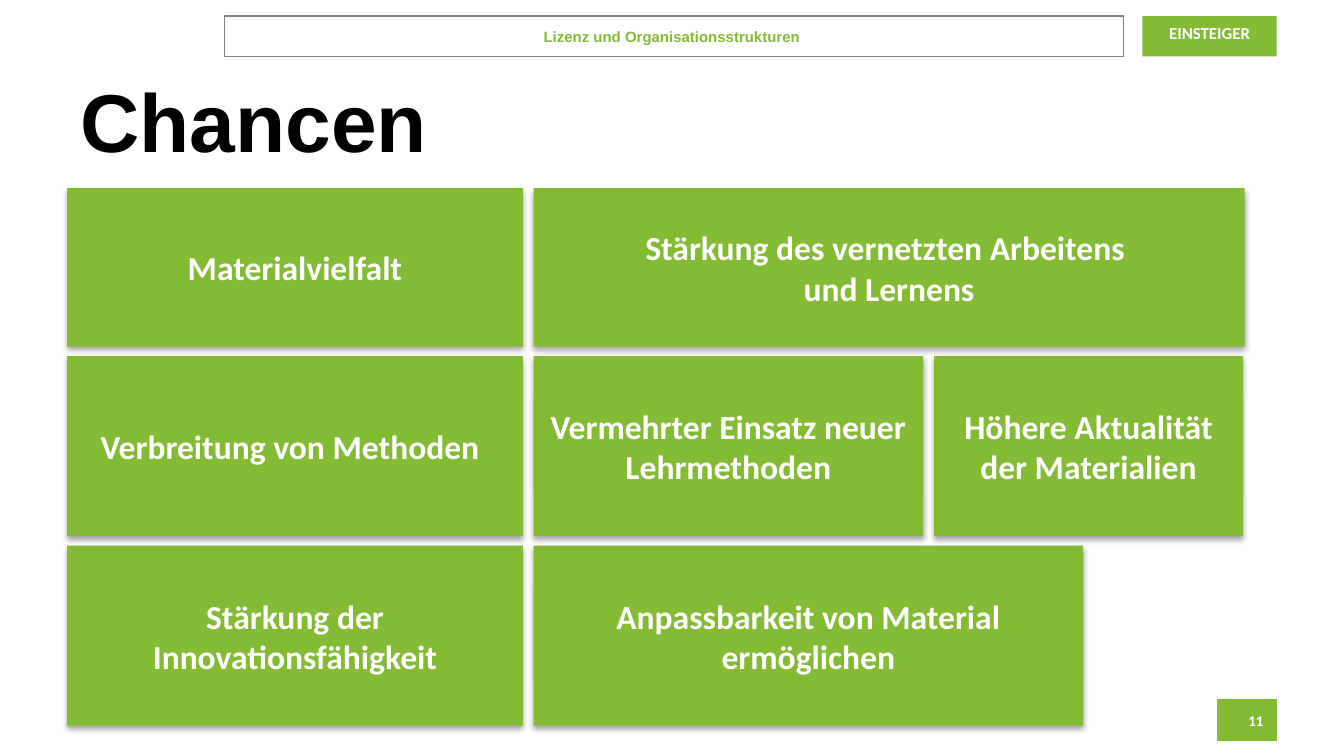
"""Build the slide "Chancen" with its grid of green tiles."""
from lxml import etree
from pptx import Presentation
from pptx.dml.color import RGBColor
from pptx.enum.shapes import MSO_SHAPE
from pptx.enum.text import MSO_ANCHOR, PP_ALIGN
from pptx.oxml.ns import qn
from pptx.util import Inches, Pt

RECT = MSO_SHAPE.RECTANGLE
TOP, MIDDLE = MSO_ANCHOR.TOP, MSO_ANCHOR.MIDDLE
LEFT, CENTER, RIGHT = PP_ALIGN.LEFT, PP_ALIGN.CENTER, PP_ALIGN.RIGHT

COLORS = {"green": "84BB35", "gray": "808080",
          "white": "FFFFFF", "black": "000000"}
WIDE = 10
HIGH = WIDE * 9 / 16
EDGE, START = 0.5, 1.4
GAP_X, GAP_Y = 0.08, 0.07
LINES = {1: 0.4, 2: 0.71}

TITLE = "Chancen"
TOPIC = "Lizenz und Organisationsstrukturen "
LEVEL = "EINSTEIGER"
PAGE = "11"

ROWS = [
    {"high": 1.18, "tiles": [
        (3.39, 0, 1, CENTER, ["Materialvielfalt"]),
        (5.29, 0.4, 2, CENTER,
         ["Stärkung des vernetzten Arbeitens ", "und Lernens"]),
    ]},
    {"high": 1.34, "tiles": [
        (3.39, 0.15, 1, LEFT, ["Verbreitung von Methoden"]),
        (2.9, 0, 2, CENTER, ["Vermehrter Einsatz neuer Lehrmethoden"]),
        (2.3, 0, 2, CENTER, ["Höhere Aktualität der Materialien"]),
    ]},
    {"high": 1.34, "tiles": [
        (3.39, 0.07, 2, CENTER, ["Stärkung der Innovationsfähigkeit"]),
        (4.09, 0, 2, CENTER, ["Anpassbarkeit von Material ermöglichen"]),
    ]},
]


def tint(name):
    return RGBColor.from_string(COLORS[name])


def box(slide, area, fill=None, line=None):
    shape = slide.shapes.add_shape(RECT, *map(Inches, area))
    shape.shadow.inherit = False
    if fill:
        shape.fill.solid()
        shape.fill.fore_color.rgb = tint(fill)
    else:
        shape.fill.background()
    if line:
        shape.line.color.rgb = tint(line)
        shape.line.width = Pt(0.75)
    else:
        shape.line.fill.background()
    return shape


def write(shape, texts, size, face, color, align=CENTER, anchor=MIDDLE):
    frame = shape.text_frame
    frame.word_wrap = True
    frame.vertical_anchor = anchor
    frame.text = "\n".join(texts)
    for para in frame.paragraphs:
        para.alignment = align
        font = para.font
        font.size, font.name, font.bold = Pt(size), face, True
        font.color.rgb = tint(color)


def shade(shape):
    effects = shape._element.spPr.find(qn("a:effectLst"))
    outer = etree.SubElement(
        effects, qn("a:outerShdw"), blurRad=str(Pt(3.1)), dist=str(Pt(1.8)),
        dir="5400000", algn="t", rotWithShape="0")
    color = etree.SubElement(outer, qn("a:srgbClr"), val=COLORS["black"])
    etree.SubElement(color, qn("a:alpha"), val="35000")


def head(slide):
    level = box(slide, (8.5, 0.12, 1, 0.3), "green")
    write(level, [LEVEL], 9, "Calibri", "white", anchor=TOP)
    title = slide.shapes.add_textbox(
        *map(Inches, (EDGE, 0.42, WIDE - 2 * EDGE, 0.94)))
    write(title, [TITLE], 44, "Arial", "black", LEFT)
    topic = box(slide, (1.67, 0.12, 6.69, 0.3), line="gray")
    write(topic, [TOPIC], 8, "Arial", "green")
    page = box(slide, (9.06, 5.21, 0.44, 0.3), "green", "green")
    write(page, [PAGE], 8, "Calibri", "white", RIGHT)


def grid(slide):
    labels = []
    top = START
    for row in ROWS:
        left, high = EDGE, row["high"]
        for wide, inset, lines, align, texts in row["tiles"]:
            shade(box(slide, (left, top, wide, high), "green"))
            tall = LINES[lines]
            area = (left + inset, top + (high - tall) / 2,
                    wide - 2 * inset, tall)
            labels.append((area, texts, align))
            left += wide + GAP_X
        top += high + GAP_Y
    for area, texts, align in labels:
        label = box(slide, area, "green")
        write(label, texts, 18, "Calibri", "white", align)


def main():
    deck = Presentation()
    deck.slide_width, deck.slide_height = Inches(WIDE), Inches(HIGH)
    slide = deck.slides.add_slide(deck.slide_layouts[6])
    head(slide)
    grid(slide)
    deck.save("out.pptx")


if __name__ == "__main__":
    main()
